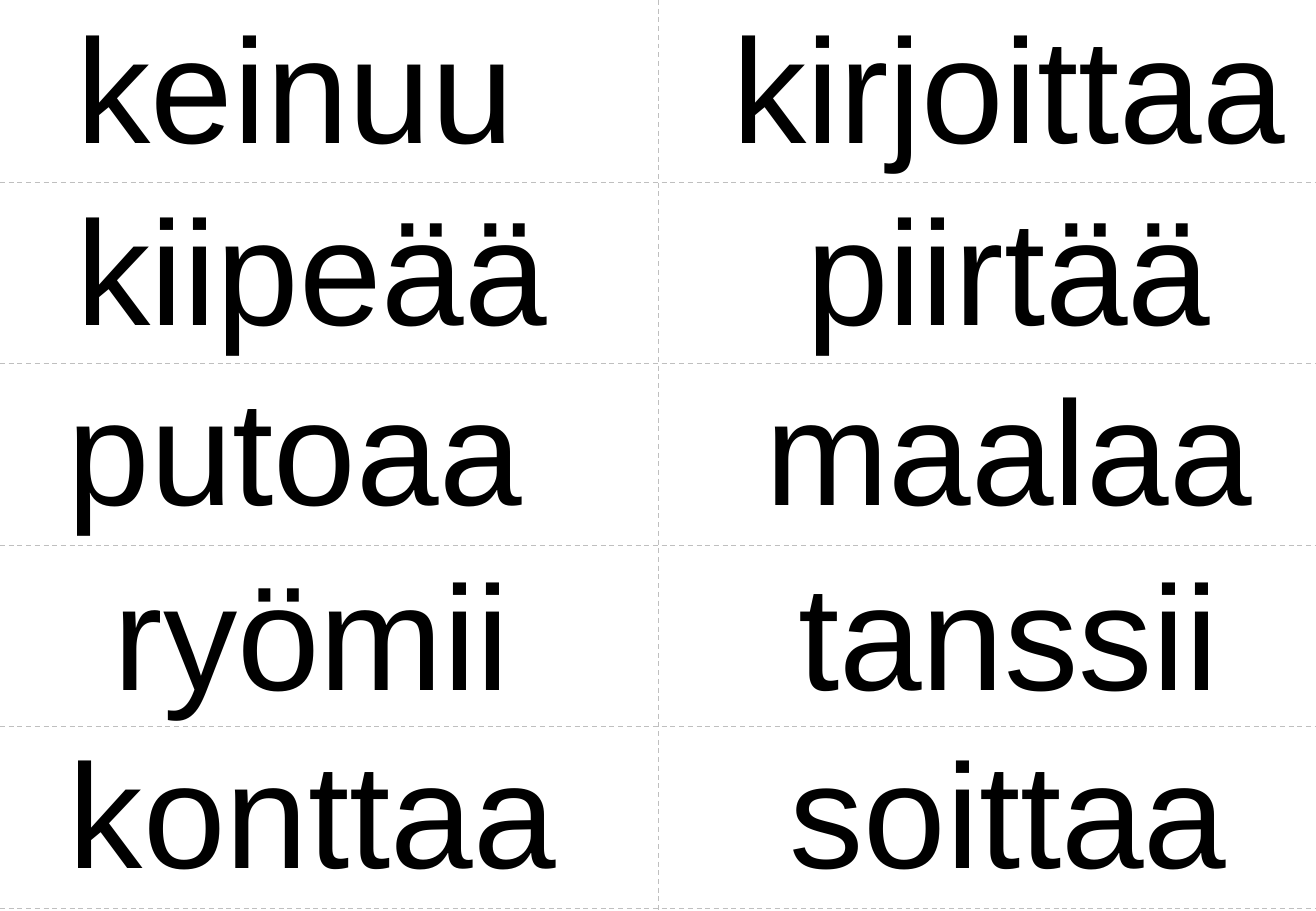
import pptx
import pptx.util
import pptx.dml.color
import pptx.enum.dml
import pptx.enum.shapes
import pptx.enum.text
import pptx.oxml.ns
import lxml.etree

PX = 9144  # EMU per px, 100 px to the inch
WIDE, HIGH = 1083, 750
THEME = {
    "font": "Arial",
    "size": pptx.util.Pt(88),
    "ink": pptx.dml.color.RGBColor(0x00, 0x00, 0x00),
    "cut": pptx.dml.color.RGBColor(0xBF, 0xBF, 0xBF),
    "line": pptx.util.Pt(0.75),
}

deck = pptx.Presentation()
deck.slide_width, deck.slide_height = WIDE * PX, HIGH * PX
slide = deck.slides.add_slide(deck.slide_layouts[6])

# Word cards: each column holds (word, left, width) from top to bottom
tops = [-9, 141, 289, 441, 588]
words = [
    [("keinuu", 57, 372), ("kiipeää", 57, 399), ("putoaa", 50, 385),
     ("ryömii", 88, 337), ("konttaa", 51, 412)],
    [("kirjoittaa", 597, 466), ("piirtää", 658, 344), ("maalaa", 624, 412),
     ("tanssii", 651, 358), ("soittaa", 644, 371)],
]
for column in words:
    for top, (word, left, width) in zip(tops, column):
        card = slide.shapes.add_textbox(left * PX, top * PX, width * PX, 148 * PX)
        frame = card.text_frame
        frame.word_wrap = False
        frame.auto_size = pptx.enum.text.MSO_AUTO_SIZE.SHAPE_TO_FIT_TEXT
        frame.margin_left = frame.margin_right = 5 * PX
        frame.margin_top = frame.margin_bottom = 5 * PX
        para = frame.paragraphs[0]
        para.alignment = pptx.enum.text.PP_ALIGN.CENTER
        run = para.add_run()
        run.text = word
        run.font.name = THEME["font"]
        run.font.size = THEME["size"]
        run.font.color.rgb = THEME["ink"]

# Cutting lines: one down the middle, one under each row
row = 149.6
cuts = [(542, 0, 542, HIGH)]
for i in range(1, 6):
    y = round(i * row)
    cuts.append((0, y, WIDE, y))
for cut in cuts:
    line = slide.shapes.add_connector(
        pptx.enum.shapes.MSO_CONNECTOR.STRAIGHT, *[n * PX for n in cut])
    line.line.color.rgb = THEME["cut"]
    line.line.width = THEME["line"]
    line.line.dash_style = pptx.enum.dml.MSO_LINE.DASH
    lxml.etree.SubElement(line._element.spPr, pptx.oxml.ns.qn("a:effectLst"))

deck.save("out.pptx")
